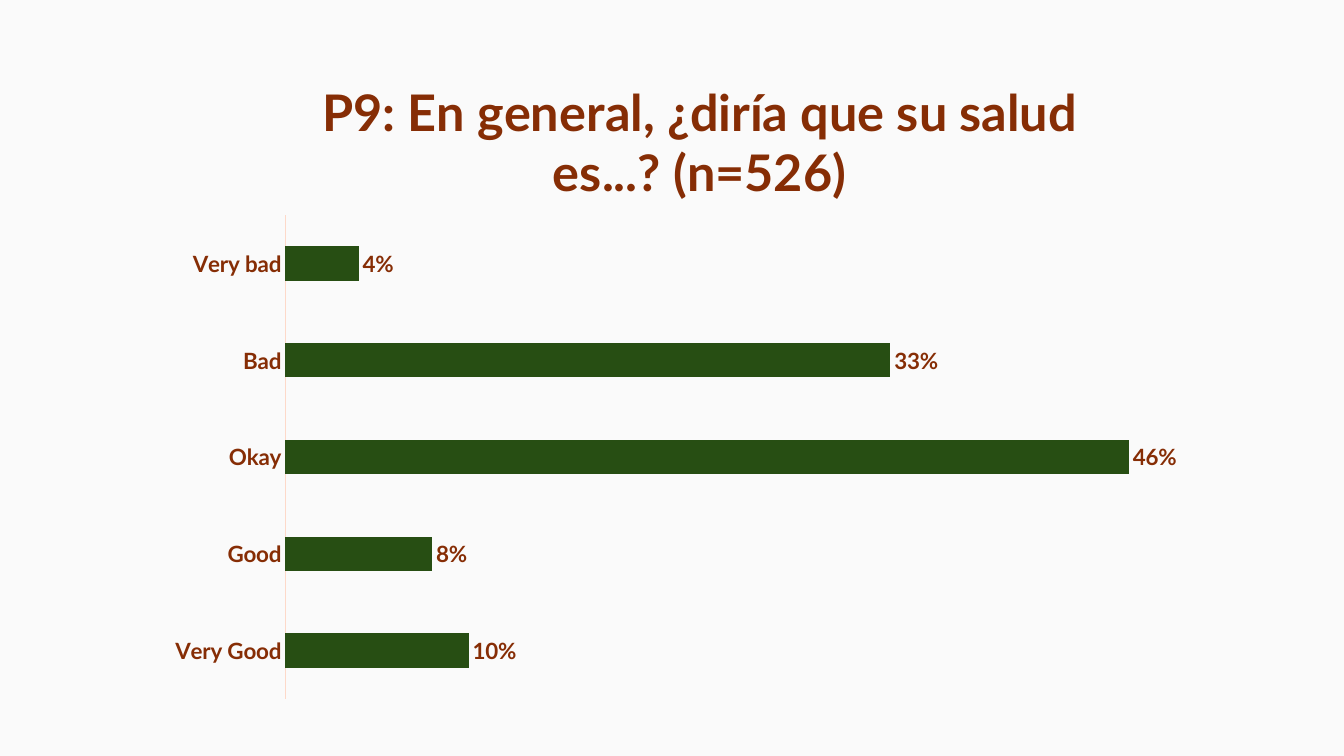
from dataclasses import dataclass

from lxml import etree
from pptx import Presentation
from pptx import util as u
from pptx.chart import data as cd
from pptx.dml import color as dc
from pptx.enum import chart as ec
from pptx.oxml import ns


@dataclass
class Theme:
    back: str = "FAFAFA"
    ink: str = "862D05"
    bar: str = "274E13"
    line: str = "FDD9C9"
    face: str = "Lato"
    base: str = "Arial"
    head: int = 36
    label: int = 16
    small: int = 10


def style(font, size, face, bold=True):
    font.name = face
    font.size = u.Pt(size)
    font.bold = bold
    font.color.rgb = dc.RGBColor.from_string(theme.ink)


def write(frame, text, **look):
    part = frame.paragraphs[0].add_run()
    part.text = text
    style(part.font, **look)


theme = Theme()
deck = Presentation()
deck.slide_width, deck.slide_height = u.Cm(33.87), u.Cm(19.05)
slide = deck.slides.add_slide(deck.slide_layouts[6])
fill = slide.background.fill
fill.solid()
fill.fore_color.rgb = dc.RGBColor.from_string(theme.back)

health = {"Very bad": 0.04, "Bad": 0.33, "Okay": 0.46, "Good": 0.08, "Very Good": 0.1}
data = cd.CategoryChartData(number_format="0%")
data.categories = list(health)
data.add_series("Series 1", list(health.values()))

chart = slide.shapes.add_chart(
    ec.XL_CHART_TYPE.BAR_CLUSTERED,
    u.Cm(3.86), u.Cm(0.84), u.Cm(26.87), u.Cm(17.15), data,
).chart
chart.has_legend = False
style(chart.font, theme.small, theme.base, bold=False)
title = chart.chart_title
write(title.text_frame, "P9: En general, ¿diría que su salud es...? (n=526)",
      size=theme.head, face=theme.face)
title.include_in_layout = False

cats = chart.category_axis
cats.reverse_order = True
cats.major_tick_mark = ec.XL_TICK_MARK.NONE
cats.format.line.width = u.Pt(0.75)
cats.format.line.color.rgb = dc.RGBColor.from_string(theme.line)
style(cats.tick_labels.font, theme.label, theme.face)

vals = chart.value_axis
vals.minimum_scale, vals.maximum_scale = 0, 0.5
vals.has_major_gridlines = False
vals.visible = False

plot = chart.plots[0]
plot.gap_width = 182
plot.vary_by_categories = False
bars = plot.series[0].format.fill
bars.solid()
bars.fore_color.rgb = dc.RGBColor.from_string(theme.bar)

plot.has_data_labels = True
tags = plot.data_labels
tags.show_value = True
tags.position = ec.XL_LABEL_POSITION.OUTSIDE_END
tags.number_format, tags.number_format_is_linked = "0%", False
style(tags.font, theme.label, theme.face)

root = chart.element
places = {
    "c:title": {"xMode": "edge", "yMode": "edge", "x": 0.15, "y": 0.05},
    "c:plotArea": {"layoutTarget": "inner", "xMode": "edge", "yMode": "edge",
                   "x": 0.124, "y": 0.267, "w": 0.86, "h": 0.711},
}
for name, place in places.items():
    area = root.find(".//" + ns.qn(name))
    frame = area.find(ns.qn("c:layout"))
    if frame is None:
        frame = etree.Element(ns.qn("c:layout"))
        area.insert(1 if name == "c:title" else 0, frame)
    spot = etree.SubElement(frame, ns.qn("c:manualLayout"))
    for key, value in place.items():
        etree.SubElement(spot, ns.qn("c:" + key)).set("val", str(value))

deck.save("out.pptx")
